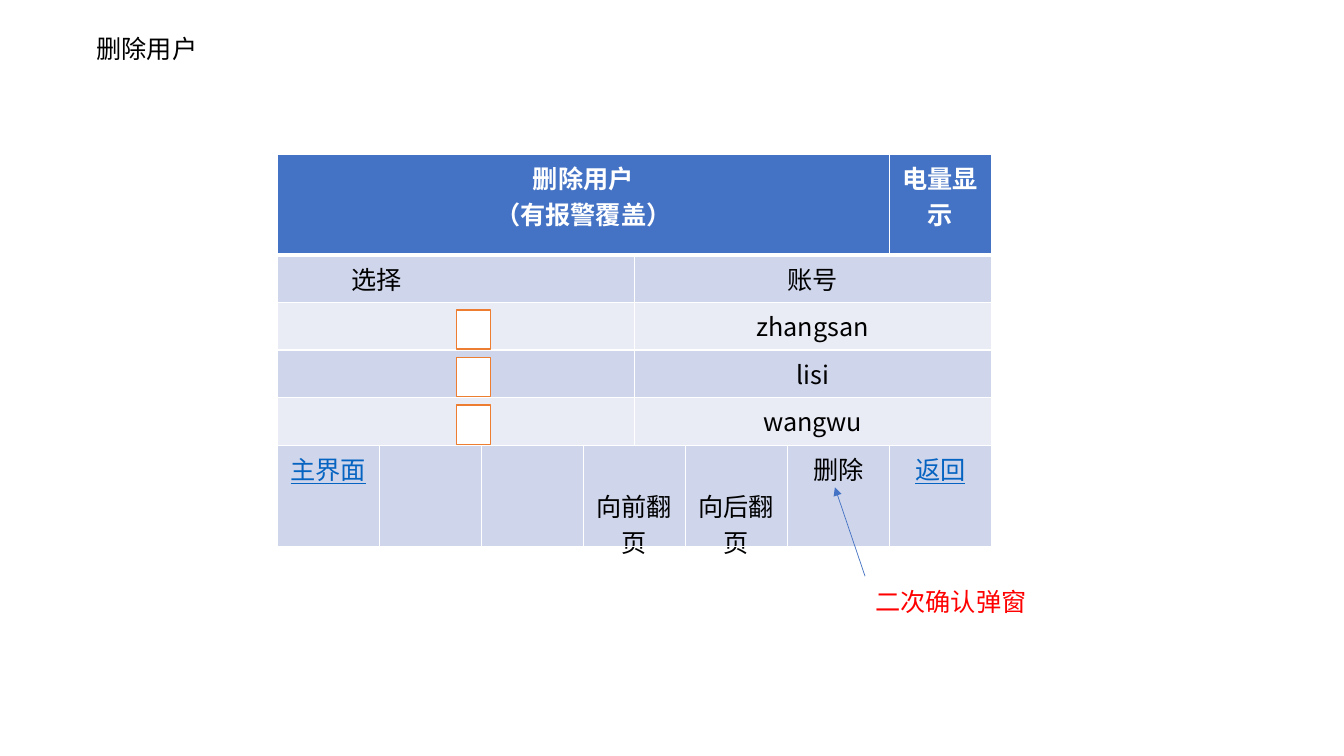
"""Build the delete-user screen slide with its user table and confirmation note."""
from lxml.etree import SubElement
from pptx import Presentation
from pptx.dml.color import RGBColor
from pptx.enum.shapes import MSO_CONNECTOR, MSO_SHAPE
from pptx.enum.text import MSO_ANCHOR, MSO_AUTO_SIZE, PP_ALIGN
from pptx.oxml.ns import qn
from pptx.util import Cm, Pt

FONT = "Noto Sans CJK SC"
BLACK, WHITE, RED, LINK = "000000", "FFFFFF", "FF0000", "0563C1"
BLUE, ORANGE, DARK_BAND, LIGHT_BAND = "4472C4", "ED7D31", "CFD5EA", "E9EBF5"

TITLE = "删除用户"
NOTE = "二次确认弹窗"
HEADER = [("删除用户\n（有报警覆盖）", 7), ("电量显示", 1)]
COLUMN_NAMES = ("选择", "账号")
USERS = ["zhangsan", "lisi", "wangwu"]
BUTTONS = [("主界面", 1), ("", 1), ("", 1), ("向前翻页", 2), ("向后翻页", 1), ("删除", 1), ("返回", 1)]
LINKS = ("主界面", "返回")
LOWERED = ("向前翻页", "向后翻页")

TABLE_LEFT, TABLE_TOP, COLUMN_WIDTH = 6.99, 3.88, 2.57
COLUMN_SHARES = [1, 1, 1, 0.5, 0.5, 1, 1, 1]
HEADER_HEIGHT, USER_HEIGHT, BUTTON_HEIGHT = 2.54, 1.2, 2.55
CHOICE_INDENT = 1.61
CHECKBOX_LEFT, CHECKBOX_WIDTH, CHECKBOX_HEIGHT, CHECKBOX_GAP = 11.51, 0.86, 0.99, 0.19


def color(value):
    return RGBColor.from_string(value)


def write(frame, text, ink=BLACK, align=PP_ALIGN.CENTER, bold=False, underline=False):
    frame.text = text
    for paragraph in frame.paragraphs:
        paragraph.alignment = align
        font = paragraph.font
        font.name, font.size = FONT, Pt(18)
        font.bold, font.underline = bold, underline
        font.color.rgb = color(ink)
        defaults = paragraph._p.pPr.find(qn("a:defRPr"))
        SubElement(defaults, qn("a:ea"), typeface=FONT)


def place_label(box, text, left, top, width, ink):
    box.left, box.top, box.width, box.height = Cm(left), Cm(top), Cm(width), Cm(1.02)
    frame = box.text_frame
    frame.word_wrap = False
    frame.auto_size = MSO_AUTO_SIZE.SHAPE_TO_FIT_TEXT
    frame.vertical_anchor = MSO_ANCHOR.TOP
    write(frame, text, ink, PP_ALIGN.LEFT)


def fill_row(table, row, entries, band, ink=BLACK, bold=False):
    column = 0
    for text, span in entries:
        cell = table.cell(row, column)
        if span > 1:
            cell.merge(table.cell(row, column + span - 1))
        cell.fill.solid()
        cell.fill.fore_color.rgb = color(band)
        is_link = text in LINKS
        write(cell.text_frame, text, LINK if is_link else ink, bold=bold, underline=is_link)
        if text in LOWERED:
            cell.margin_top, cell.margin_bottom = Cm(1.05), Cm(-0.35)
        column += span


def underline_header(table):
    for column in range(len(COLUMN_SHARES)):
        properties = table.cell(0, column)._tc.get_or_add_tcPr()
        border = properties.makeelement(qn("a:lnB"), {"w": str(Pt(3))})
        properties.insert(0, border)
        SubElement(SubElement(border, qn("a:solidFill")), qn("a:srgbClr"), val=WHITE)


def add_user_table(slide):
    heights = [HEADER_HEIGHT] + [USER_HEIGHT] * (len(USERS) + 1) + [BUTTON_HEIGHT]
    table = slide.shapes.add_table(
        len(heights), len(COLUMN_SHARES), Cm(TABLE_LEFT), Cm(TABLE_TOP),
        Cm(COLUMN_WIDTH * sum(COLUMN_SHARES)), Cm(sum(heights))).table
    for column, share in zip(table.columns, COLUMN_SHARES):
        column.width = Cm(COLUMN_WIDTH * share)
    for row, height in zip(table.rows, heights):
        row.height = Cm(height)

    fill_row(table, 0, HEADER, BLUE, WHITE, bold=True)
    underline_header(table)
    pairs = [COLUMN_NAMES] + [("", user) for user in USERS]
    for row, pair in enumerate(pairs, start=1):
        fill_row(table, row, [(text, 4) for text in pair], DARK_BAND if row % 2 else LIGHT_BAND)
    fill_row(table, len(heights) - 1, BUTTONS, DARK_BAND)

    choice = table.cell(1, 0).text_frame.paragraphs[0]
    choice.alignment = PP_ALIGN.LEFT
    choice._p.pPr.set("marL", str(Cm(CHOICE_INDENT)))


def add_checkboxes(slide):
    first_user_top = TABLE_TOP + HEADER_HEIGHT + USER_HEIGHT
    for index in range(len(USERS)):
        top = first_user_top + index * USER_HEIGHT + CHECKBOX_GAP
        box = slide.shapes.add_shape(
            MSO_SHAPE.RECTANGLE, Cm(CHECKBOX_LEFT), Cm(top), Cm(CHECKBOX_WIDTH), Cm(CHECKBOX_HEIGHT))
        box.shadow.inherit = False
        box.fill.solid()
        box.fill.fore_color.rgb = color(WHITE)
        box.line.color.rgb = color(ORANGE)
        box.line.width = Pt(1)


def add_arrow(slide):
    arrow = slide.shapes.add_connector(
        MSO_CONNECTOR.STRAIGHT, Cm(21.8), Cm(14.52), Cm(21.04), Cm(12.28))
    arrow.line.color.rgb = color(BLUE)
    arrow.line.width = Pt(0.5)
    SubElement(arrow.line._get_or_add_ln(), qn("a:tailEnd"), type="triangle")
    SubElement(arrow._element.spPr, qn("a:effectLst"))


def main():
    deck = Presentation()
    deck.slide_width, deck.slide_height = Cm(33.87), Cm(19.05)
    slide = deck.slides.add_slide(deck.slide_layouts[5])
    place_label(slide.shapes.title, TITLE, 2.18, 0.71, 3.07, BLACK)
    add_user_table(slide)
    add_checkboxes(slide)
    add_arrow(slide)
    note = slide.shapes.add_textbox(0, 0, 0, 0)
    place_label(note, NOTE, 21.81, 14.65, 4.37, RED)
    deck.save("out.pptx")


if __name__ == "__main__":
    main()
